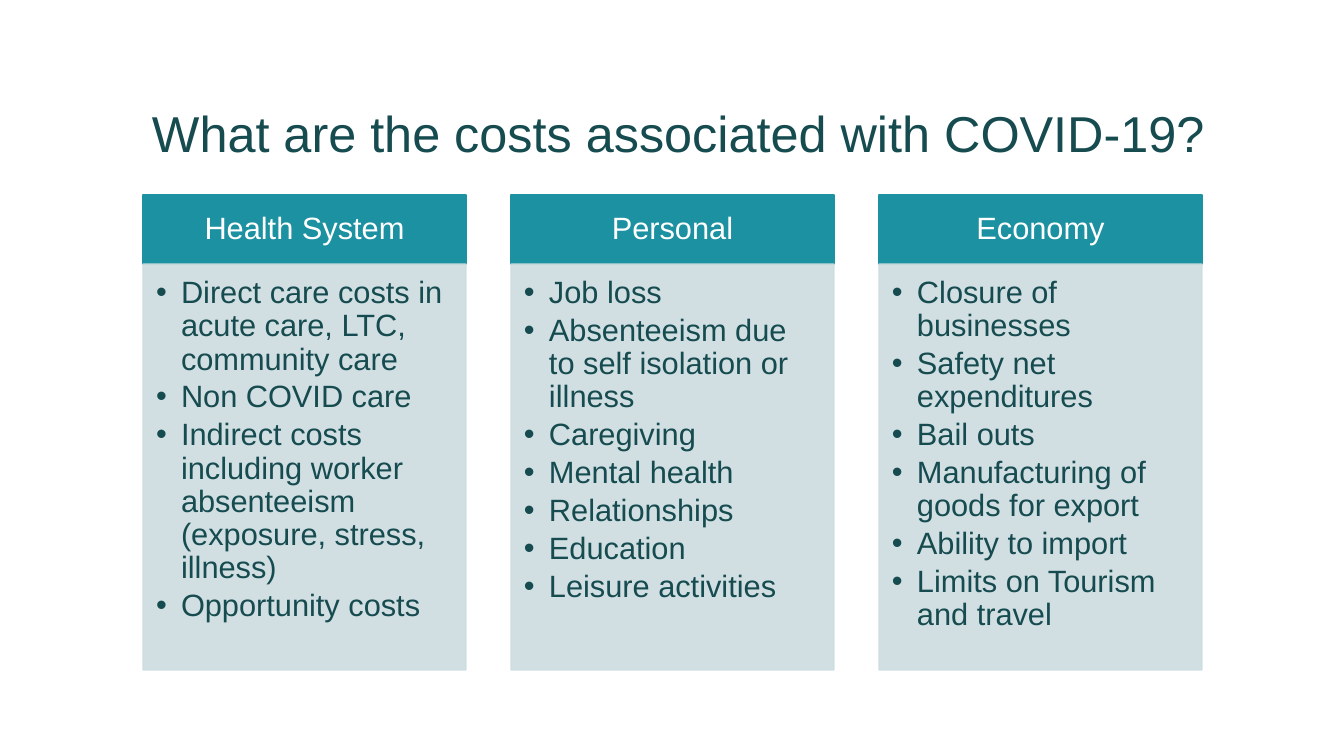
import pptx
import pptx.util
import pptx.dml.color
import pptx.enum.shapes
import pptx.enum.text
import pptx.oxml.ns
from lxml import etree

TITLE = "What are the costs associated with COVID-19?"
COSTS = {
    "Health System": [
        "Direct care costs in acute care, LTC, community care",
        "Non COVID care",
        "Indirect costs including worker absenteeism (exposure, stress, illness)",
        "Opportunity costs",
    ],
    "Personal": [
        "Job loss",
        "Absenteeism due to self isolation or illness",
        "Caregiving",
        "Mental health",
        "Relationships",
        "Education",
        "Leisure activities",
    ],
    "Economy": [
        "Closure of businesses",
        "Safety net expenditures",
        "Bail outs",
        "Manufacturing of goods for export",
        "Ability to import",
        "Limits on Tourism and travel",
    ],
}
DARK, TEAL, PALE, WHITE = "164B4F", "1B91A1", "CDDCE0", "FFFFFF"
WIDE, HIGH = 1344, 756
LEFT, TOP, COL, GAP = 143, 195, 323, 45
HEAD, BODY = 69, 406
INDENT = 25

ALIGN = pptx.enum.text.PP_ALIGN
ANCHOR = pptx.enum.text.MSO_ANCHOR
qn = pptx.oxml.ns.qn


def px(n):
    return pptx.util.Emu(round(n * 914400 / 100.8))


def hue(code):
    return pptx.dml.color.RGBColor.from_string(code)


def add_bullet(para):
    props = para._p.get_or_add_pPr()
    props.set("marL", str(px(INDENT)))
    props.set("indent", str(-px(INDENT)))
    etree.SubElement(props, qn("a:buFont"), typeface="Arial")
    etree.SubElement(props, qn("a:buChar"), char="•")


def write(shape, lines, size=22, color=DARK, align=ALIGN.LEFT,
          anchor=ANCHOR.TOP, inset=(10, 5, 10, 5), after=0, bullet=False):
    frame = shape.text_frame
    frame.word_wrap = True
    frame.vertical_anchor = anchor
    (frame.margin_left, frame.margin_top,
     frame.margin_right, frame.margin_bottom) = map(px, inset)
    frame.text = "\n".join(lines)
    for para in frame.paragraphs:
        if bullet:
            add_bullet(para)
        para.alignment = align
        para.line_spacing = 0.9
        para.space_after = pptx.util.Pt(after)
        para.font.name = "Arial"
        para.font.size = pptx.util.Pt(size)
        para.font.color.rgb = hue(color)


def add_box(slide, x, y, w, h, color, alpha=100):
    kind = pptx.enum.shapes.MSO_SHAPE.RECTANGLE
    box = slide.shapes.add_shape(kind, px(x), px(y), px(w), px(h))
    box.shadow.inherit = False
    box.fill.solid()
    box.fill.fore_color.rgb = hue(color)
    box.line.color.rgb = hue(color)
    box.line.width = pptx.util.Pt(1)
    if alpha < 100:
        for node in box._element.spPr.iter(qn("a:srgbClr")):
            etree.SubElement(node, qn("a:alpha"), val=str(alpha * 1000))
    return box


def main():
    deck = pptx.Presentation()
    deck.slide_width, deck.slide_height = px(WIDE), px(HIGH)
    slide = deck.slides.add_slide(deck.slide_layouts[6])

    title = slide.shapes.add_textbox(px(142), px(42), px(1117), px(126))
    write(title, [TITLE], size=36, anchor=ANCHOR.BOTTOM)

    for i, (name, items) in enumerate(COSTS.items()):
        x = LEFT + i * (COL + GAP)
        head = add_box(slide, x, TOP, COL, HEAD, TEAL)
        write(head, [name], color=WHITE, align=ALIGN.CENTER,
              anchor=ANCHOR.MIDDLE, inset=(17, 10, 17, 10))
        body = add_box(slide, x, TOP + HEAD, COL, BODY, PALE, alpha=90)
        write(body, items, inset=(13, 13, 17, 19), after=3.3, bullet=True)

    deck.save("out.pptx")


if __name__ == "__main__":
    main()
